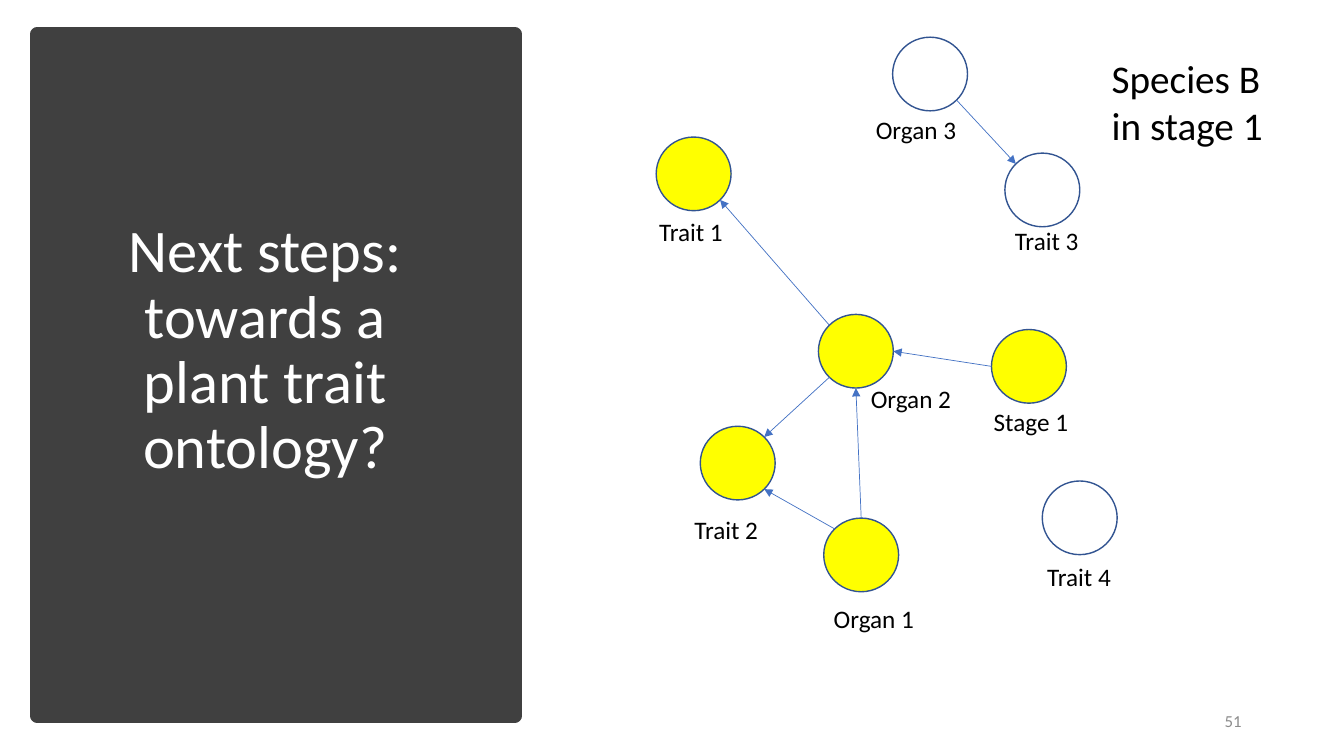
from math import cos, sin, radians
from pptx import Presentation
from pptx.dml.color import RGBColor
from pptx.enum.shapes import MSO_CONNECTOR, MSO_SHAPE
from pptx.enum.text import MSO_ANCHOR, MSO_AUTO_SIZE, PP_ALIGN
from pptx.oxml.ns import qn
from pptx.util import Pt
from lxml.etree import SubElement

WHITE = RGBColor(0xFF, 0xFF, 0xFF)
BLACK = RGBColor(0, 0, 0)
DARK = RGBColor(0x40, 0x40, 0x40)
GREY = RGBColor(0x8C, 0x8C, 0x8C)
YELLOW = RGBColor(0xFF, 0xFF, 0)
RIM = RGBColor(0x32, 0x54, 0x91)
BLUE = RGBColor(0x44, 0x72, 0xC4)
WIDE, HIGH = 53.5, 52.6


def add_form(kind, box, fill, line, width):
    form = slide.shapes.add_shape(kind, *map(Pt, box))
    form.shadow.inherit = False
    form.fill.solid()
    form.fill.fore_color.rgb = fill
    form.line.color.rgb = line
    form.line.width = Pt(width)
    return form


def write(shape, text, size, color, align, anchor, wrap=True):
    frame = shape.text_frame
    frame.text = text
    look = {"word_wrap": wrap, "vertical_anchor": anchor,
            "auto_size": MSO_AUTO_SIZE.NONE}
    for name, value in look.items():
        setattr(frame, name, value)
    para = frame.paragraphs[0]
    para.alignment = align
    for name, value in {"name": "Calibri", "size": Pt(size)}.items():
        setattr(para.font, name, value)
    para.font.color.rgb = color
    return para


deck = Presentation()
deck.slide_width, deck.slide_height = Pt(960), Pt(540)
slide = deck.slides.add_slide(deck.slide_layouts[5])

# Title on its dark panel
title = slide.shapes.title
place = {"left": 52.6, "top": 171.4, "width": 273.6, "height": 159.1}
for name, value in place.items():
    setattr(title, name, Pt(value))
para = write(title, "Next steps: towards a plant trait ontology?", 43.2,
             WHITE, PP_ALIGN.CENTER, MSO_ANCHOR.MIDDLE)
para.line_spacing = 0.9
panel = add_form(MSO_SHAPE.RECTANGLE, (26.6, 24.5, 341.3, 486.7), DARK, DARK, 10)
title.element.addprevious(panel.element)

# Circles: left, top, fill, then left and top of the label
nodes = {
    "Trait 1": (468.7, 97.9, YELLOW, 463.7, 151.2),
    "Trait 3": (717.8, 109.4, WHITE, 717.8, 157.7),
    "Trait 2": (500.2, 304.5, YELLOW, 488.9, 363.6),
    "Organ 2": (584.6, 224.6, YELLOW, 614.9, 270),
    "Organ 1": (588.4, 370.1, YELLOW, 588.4, 427.7),
    "Stage 1": (708.2, 235.4, YELLOW, 702.7, 286.6),
    "Organ 3": (637.6, 26.6, WHITE, 618.5, 77.8),
    "Trait 4": (744.5, 343.6, WHITE, 740.9, 397.4),
}
for left, top, fill, *_ in nodes.values():
    add_form(MSO_SHAPE.OVAL, (left, top, WIDE, HIGH), fill, RIM, 1)

# Arrows: start and end circle, each with its clockwise angle on the rim
links = [
    ("Organ 2", 225, "Trait 1", 45),
    ("Organ 2", 135, "Trait 2", 315),
    ("Organ 3", 45, "Trait 3", 225),
    ("Stage 1", 180, "Organ 2", 0),
    ("Organ 1", 225, "Trait 2", 45),
    ("Organ 1", 270, "Organ 2", 90),
]
for start, out, end, back in links:
    ends = []
    for name, angle in ((start, out), (end, back)):
        left, top = nodes[name][:2]
        ends += [Pt(left + WIDE / 2 * (1 + cos(radians(angle)))),
                 Pt(top + HIGH / 2 * (1 + sin(radians(angle))))]
    arrow = slide.shapes.add_connector(MSO_CONNECTOR.STRAIGHT, *ends)
    arrow.line.color.rgb = BLUE
    arrow.line.width = Pt(0.5)
    SubElement(arrow.line._get_or_add_ln(), qn("a:tailEnd"), type="triangle")
    SubElement(arrow.element.spPr, qn("a:effectLst"))

for name, (*_, left, top) in nodes.items():
    width = 64 if name.startswith("Trait") else 76
    label = slide.shapes.add_textbox(Pt(left), Pt(top), Pt(width), Pt(29))
    write(label, name, 18, BLACK, PP_ALIGN.LEFT, MSO_ANCHOR.TOP, False)

# Heading of the graph and page number
head = slide.shapes.add_textbox(Pt(787), Pt(35.3), Pt(132.5), Pt(75))
write(head, "Species B in stage 1", 28, BLACK, PP_ALIGN.LEFT, MSO_ANCHOR.TOP)
page = slide.shapes.add_textbox(Pt(678), Pt(500.5), Pt(216), Pt(28.8))
write(page, "51", 12, GREY, PP_ALIGN.RIGHT, MSO_ANCHOR.MIDDLE)

deck.save("out.pptx")
